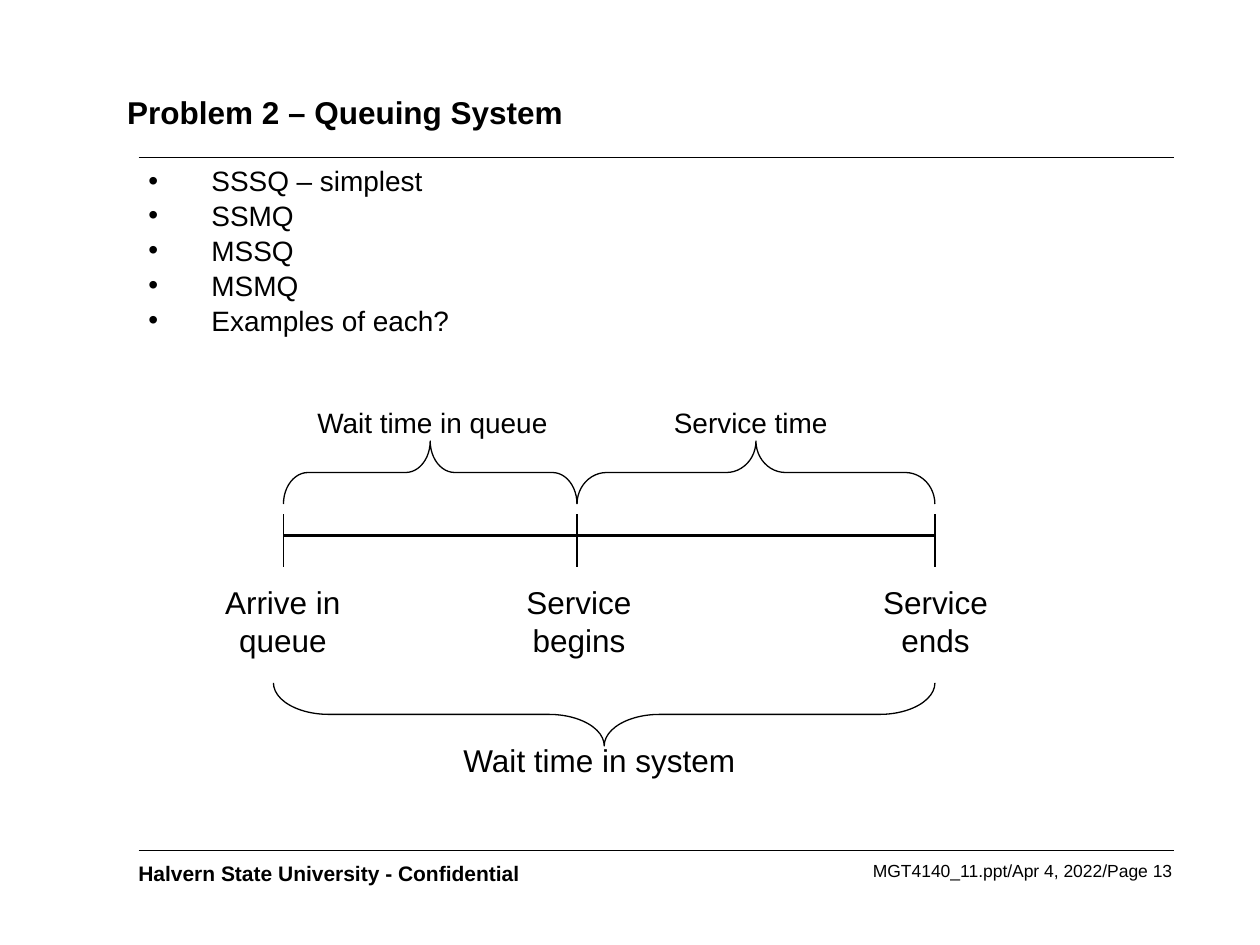
import pptx
import pptx.util
import pptx.dml.color
import pptx.enum.shapes
import pptx.enum.text
import pptx.oxml
import pptx.oxml.ns
from pptx.util import Inches

COLORS = {"ink": "000000", "paper": "FFFFFF"}
ALIGN = pptx.enum.text.PP_ALIGN
ANCHOR = pptx.enum.text.MSO_ANCHOR


class SlideBuilder:
    """Draws text, lines and braces on one slide in a single style."""

    def __init__(self, prs, font="Arial"):
        self.s = prs.slides.add_slide(prs.slide_layouts[6])
        self.font = font
        self.s.background.fill.solid()
        self.s.background.fill.fore_color.rgb = self.color("paper")

    def color(self, name):
        return pptx.dml.color.RGBColor.from_string(COLORS[name])

    def text(self, box, lines, size, bold=False, align=ALIGN.LEFT, bullet=False, **frame):
        sp = self.s.shapes.add_textbox(*map(Inches, box))
        tf = sp.text_frame
        for key, value in {"word_wrap": True, **frame}.items():
            setattr(tf, key, value)
        for i, line in enumerate(lines):
            p = tf.paragraphs[0] if i == 0 else tf.add_paragraph()
            p.alignment = align
            r = p.add_run()
            r.text = line
            style = {"name": self.font, "size": pptx.util.Pt(size), "bold": bold}
            for key, value in style.items():
                setattr(r.font, key, value)
            r.font.color.rgb = self.color("ink")
            if bullet:
                self.bullet(p)

    def bullet(self, p):
        p.space_before = pptx.util.Pt(0.75)
        pPr = p._p.get_or_add_pPr()
        pPr.set("marL", str(Inches(0.5)))
        pPr.set("indent", str(-Inches(0.5)))
        for tag, key, value in (("buFont", "typeface", self.font), ("buChar", "char", "•")):
            bu = pptx.oxml.ns.qn("a:" + tag)
            pPr.append(pPr.makeelement(bu, {key: value}))

    def line(self, x1, y1, x2, y2, width):
        kind = pptx.enum.shapes.MSO_CONNECTOR.STRAIGHT
        sp = self.s.shapes.add_connector(kind, *map(Inches, (x1, y1, x2, y2)))
        sp.line.width = pptx.util.Pt(width)
        sp.line.color.rgb = self.color("ink")
        spPr = sp._element.spPr
        spPr.append(spPr.makeelement(pptx.oxml.ns.qn("a:effectLst"), {}))

    def brace(self, x1, x2, top, rotation, curve, depth=0.5):
        span = x2 - x1
        left = (x1 + x2 - depth) / 2
        box = (left, top + (depth - span) / 2, depth, span)
        kind = pptx.enum.shapes.MSO_SHAPE.RIGHT_BRACE
        sp = self.s.shapes.add_shape(kind, *map(Inches, box))
        sp.rotation = rotation
        sp.adjustments[0] = curve
        sp.shadow.inherit = False
        sp.fill.background()
        sp.line.width = pptx.util.Pt(0.75)
        sp.line.color.rgb = self.color("ink")


def main():
    prs = pptx.Presentation()
    prs.slide_width, prs.slide_height = Inches(10), Inches(7.5)
    b = SlideBuilder(prs)

    b.text((5.58, 6.78, 3.82, 0.26), ["MGT4140_11.ppt/Apr 4, 2022/Page 13"], 10, align=ALIGN.RIGHT)
    b.text((1, 6.78, 3.84, 0.3), ["Halvern State University - Confidential"], 12, bold=True)
    for y in (1.25, 6.75):
        b.line(1.1, y, 9.32, y, 1)
    b.text((0.83, 0.25, 8.5, 0.92), ["Problem 2 – Queuing System"], 18, bold=True,
           vertical_anchor=ANCHOR.BOTTOM, margin_left=Inches(0.18), margin_bottom=Inches(0.13))
    b.text((1.08, 1.25, 8.25, 2.72),
           ["SSSQ – simplest", "SSMQ", "MSSQ", "MSMQ", "Examples of each?"], 16, bullet=True)

    arrive, begin, end = 2.25, 4.58, 7.42
    b.line(arrive, 4.25, end, 4.25, 2.25)
    events = ((arrive, 1.58, 1.33, "Arrive in queue"),
              (begin, 3.92, 1.35, "Service begins"),
              (end, 6.75, 1.35, "Service ends"))
    for x, left, width, label in events:
        b.line(x, 4.08, x, 4.5, 0.75)
        b.text((left, 4.58, width, 0.7), [label], 18, align=ALIGN.CENTER)

    b.brace(arrive, begin, 3.5, 270, 0.39)
    b.brace(begin, end, 3.5, 270, 0.47)
    b.brace(2.17, end, 5.42, 90, 0.88)
    spans = ((2.42, 3.17, 2.04, 0.37, "Wait time in queue", 16),
             (5.25, 3.17, 1.42, 0.37, "Service time", 16),
             (3.58, 5.83, 2.37, 0.4, "Wait time in system", 18))
    for *box, label, size in spans:
        b.text(box, [label], size, word_wrap=False)

    prs.save("out.pptx")


if __name__ == "__main__":
    main()
